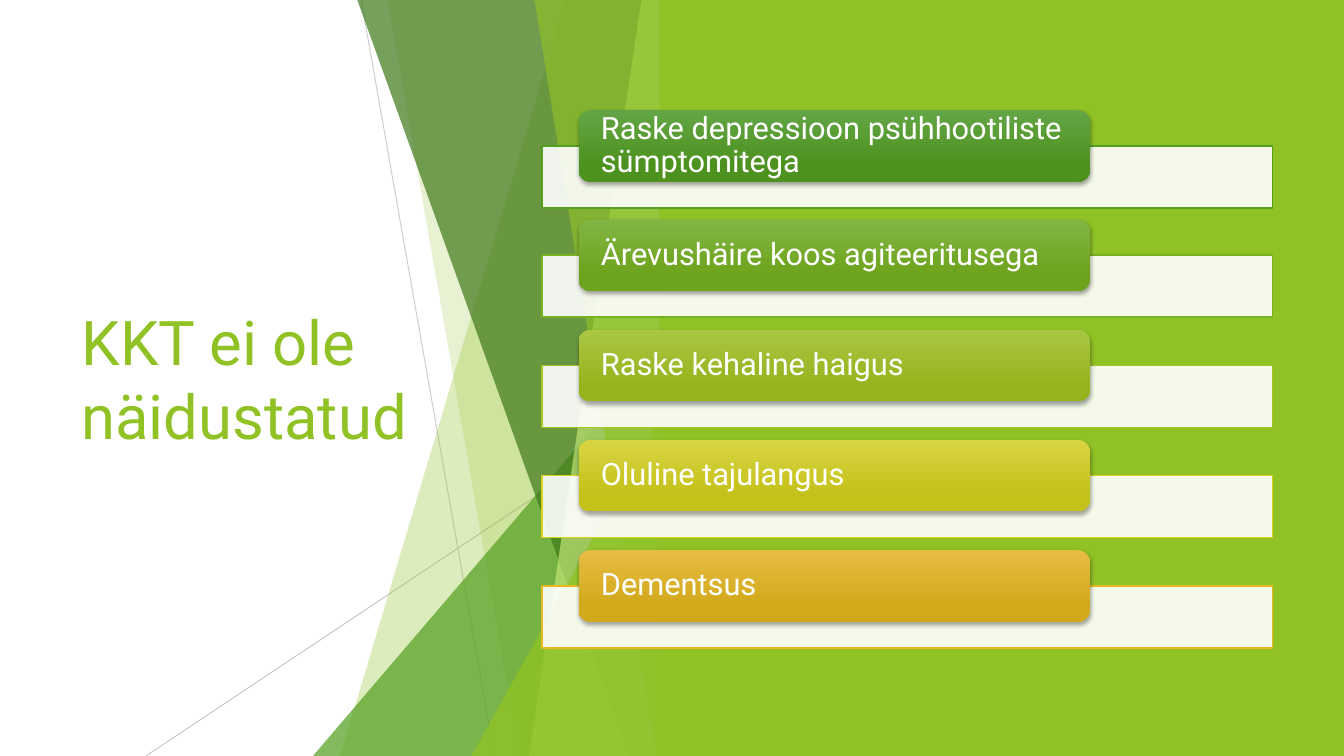
from lxml.etree import SubElement
from pptx import Presentation
from pptx.dml.color import RGBColor
from pptx.enum.shapes import MSO_CONNECTOR, MSO_SHAPE
from pptx.enum.text import MSO_ANCHOR, MSO_AUTO_SIZE, PP_ALIGN
from pptx.oxml.ns import qn
from pptx.util import Pt

PX = 9525  # EMU per px, slide is 1280 x 720 px
WIDE, HIGH = 1280, 720
FONT = "Roboto"
WHITE = RGBColor(0xFF, 0xFF, 0xFF)
GRAY = RGBColor(0xBF, 0xBF, 0xBF)
LIME = RGBColor(0x90, 0xC2, 0x26)
GREEN = RGBColor(0x54, 0xA0, 0x21)
DARK = RGBColor(0x3F, 0x78, 0x19)
PALE = RGBColor(0xC0, 0xE4, 0x74)


def fade(shape, part):
    """Set the opacity, in percent, of the first colour of a shape."""
    color = next(shape._element.spPr.iter(qn("a:srgbClr")))
    SubElement(color, qn("a:alpha")).set("val", str(part * 1000))


def add_box(kind, *area):
    """Add a preset shape at left, top, width, height in px."""
    shape = slide.shapes.add_shape(kind, *[n * PX for n in area])
    shape.shadow.inherit = False
    shape.line.fill.background()
    return shape


deck = Presentation()
deck.slide_width, deck.slide_height = WIDE * PX, HIGH * PX
slide = deck.slides.add_slide(deck.slide_layouts[5])
slide.background.fill.solid()
slide.background.fill.fore_color.rgb = WHITE

# Title
title = slide.shapes.title
title.left, title.top, title.width, title.height = [n * PX for n in (68, 145, 372, 430)]
frame = title.text_frame
frame.word_wrap = True
frame.auto_size = MSO_AUTO_SIZE.NONE
frame.vertical_anchor = MSO_ANCHOR.MIDDLE
para = frame.paragraphs[0]
para.alignment = PP_ALIGN.LEFT
run = para.add_run()
run.text = "KKT ei ole näidustatud"
run.font.name, run.font.size = FONT, Pt(44)
run.font.color.rgb = LIME

# Thin lines behind the facets
for ends, part in (((344, 0, 471, HIGH), 75), ((639, 387, 139, HIGH), 80)):
    line = slide.shapes.add_connector(MSO_CONNECTOR.STRAIGHT, *[n * PX for n in ends])
    line.line.color.rgb = GRAY
    line.line.width = Pt(0.75)
    fade(line, part)
    SubElement(line._element.spPr, qn("a:effectLst"))

# Facets: a band has its top x and foot x, a wedge its left x and tip y
EDGE = 640
facets = [
    ("band", 539, 324, LIME, 30),
    ("band", 369, 495, LIME, 20),
    ("wedge", 298, 320, GREEN, 72),
    ("band", 340, 599, DARK, 70),
    ("band", 611, 504, PALE, 70),
    ("band", 509, 625, LIME, 65),
    ("wedge", 449, 377, LIME, 80),
]
for kind, one, two, color, part in facets:
    if kind == "band":
        path = slide.shapes.build_freeform(one, -1, scale=PX)
        path.add_line_segments([(EDGE, -1), (EDGE, HIGH), (two, HIGH)], close=True)
        facet = path.convert_to_shape()
        facet.shadow.inherit = False
        facet.line.fill.background()
    else:
        facet = add_box(MSO_SHAPE.ISOSCELES_TRIANGLE, one, two, EDGE - one, HIGH - two)
        facet.adjustments[0] = 1
    facet.fill.solid()
    facet.fill.fore_color.rgb = color
    fade(facet, part)

# Right panel
panel = add_box(MSO_SHAPE.RECTANGLE, 628, 0, WIDE - 628, HIGH)
panel.fill.solid()
panel.fill.fore_color.rgb = LIME

# List: text, bar outline, label gradient from top to foot
items = [
    ("Raske depressioon psühhootiliste sümptomitega", "54A021", "63A545", "4D921E"),
    ("Ärevushäire koos agiteeritusega", "79B220", "82B644", "6EA31D"),
    ("Raske kehaline haigus", "A5C41F", "AAC744", "97B31C"),
    ("Oluline tajulangus", "D7D31D", "D8D543", "C4C11A"),
    ("Dementsus", "E6B91E", "E7BC43", "D2A91B"),
]
for i, (text, rim, light, deep) in enumerate(items):
    top = 105 + 419 * i // 4

    # Bar
    bar = add_box(MSO_SHAPE.RECTANGLE, 516, top + 34, 696, 59)
    bar.fill.solid()
    bar.fill.fore_color.rgb = WHITE
    fade(bar, 90)
    bar.line.color.rgb = RGBColor.from_string(rim)
    bar.line.width = Pt(1)

    # Label
    label = add_box(MSO_SHAPE.ROUNDED_RECTANGLE, 551, top, 487, 68)
    label.fill.gradient()
    label.fill.gradient_angle = 270
    for stop, tone, place in zip(label.fill.gradient_stops, (light, deep), (0, 0.78)):
        stop.color.rgb = RGBColor.from_string(tone)
        stop.position = place

    # Soft shadow below the label
    effect = label._element.spPr.find(qn("a:effectLst"))
    shade = SubElement(effect, qn("a:outerShdw"), blurRad=str(Pt(3)), dist=str(Pt(2)),
                       dir="5400000", rotWithShape="0")
    black = SubElement(shade, qn("a:srgbClr"), val="000000")
    SubElement(black, qn("a:alpha"), val="35000")

    # Label text
    frame = label.text_frame
    frame.word_wrap = True
    frame.vertical_anchor = MSO_ANCHOR.MIDDLE
    frame.margin_left = frame.margin_right = 18 * PX
    frame.margin_top = frame.margin_bottom = 0
    para = frame.paragraphs[0]
    para.alignment = PP_ALIGN.LEFT
    para.line_spacing = 0.9
    run = para.add_run()
    run.text = text
    run.font.name, run.font.size = FONT, Pt(22)
    run.font.color.rgb = WHITE

deck.save("out.pptx")
